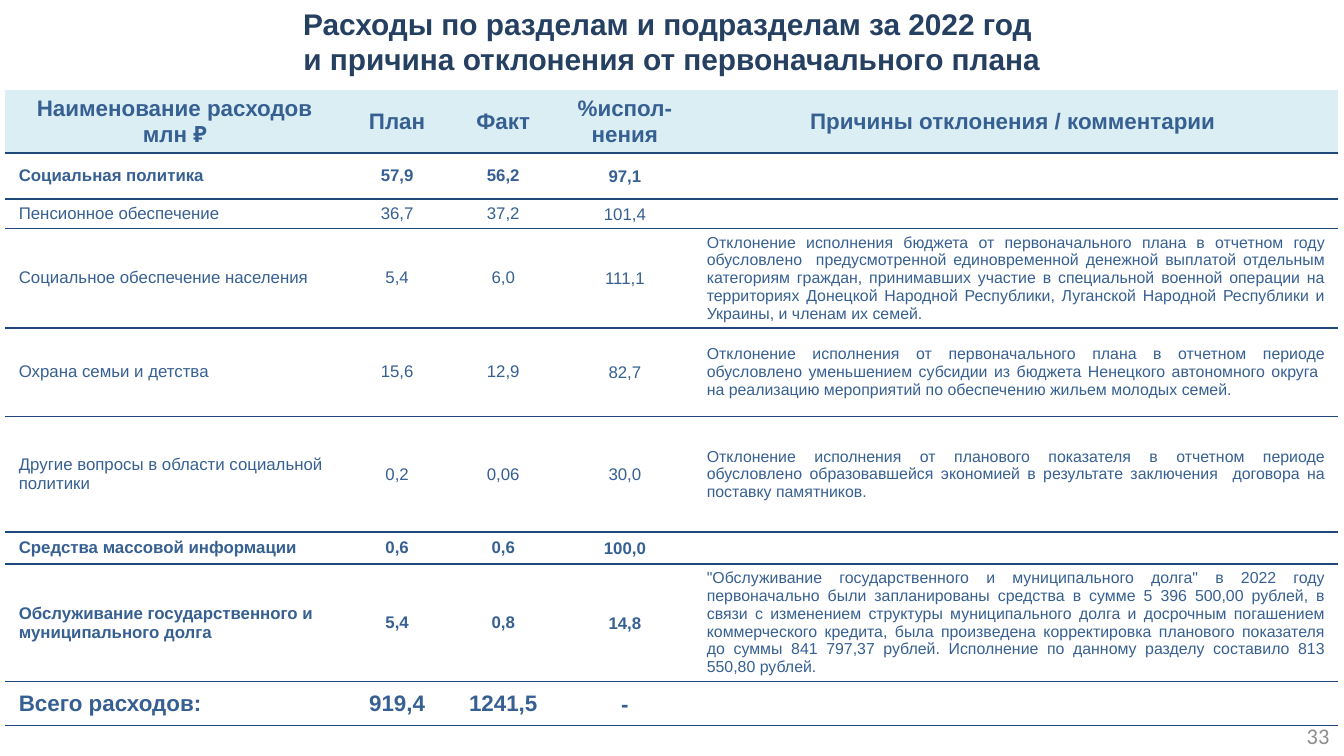
import pptx
import pptx.dml.color
import pptx.enum.text
import pptx.util
from lxml import etree
from pptx.oxml.ns import qn

Inches = pptx.util.Inches
Pt = pptx.util.Pt
ALIGN = pptx.enum.text.PP_ALIGN
MIDDLE = pptx.enum.text.MSO_ANCHOR.MIDDLE

COLORS = {
    "title": "254061",
    "text": "376092",
    "header": "DBEEF4",
    "rule": "1F497D",
    "number": "8C8C8C",
}
COLUMN_WIDTHS = [2.52, 0.79, 0.79, 1.02, 4.8]
HEADER = ["Наименование расходов млн ₽", "План", "Факт", "%испол-нения",
          "Причины отклонения / комментарии "]
HEADER_HEIGHT = 0.47

# Height, size, bold, then the five cell texts
ROWS = [
    (0.34, 9, True, ["Социальная политика", "57,9", "56,2", "97,1", ""]),
    (0.2, 9, False, ["Пенсионное обеспечение", "36,7", "37,2", "101,4", ""]),
    (0.73, 9, False, [
        "Социальное обеспечение населения", "5,4", "6,0", "111,1",
        "Отклонение исполнения бюджета от первоначального плана в отчетном году "
        "обусловлено  предусмотренной единовременной денежной выплатой отдельным "
        "категориям граждан, принимавших участие в специальной военной операции на "
        "территориях Донецкой Народной Республики, Луганской Народной Республики и "
        "Украины, и членам их семей."]),
    (0.66, 9, False, [
        "Охрана семьи и детства", "15,6", "12,9", "82,7",
        "Отклонение исполнения от первоначального плана в отчетном периоде "
        "обусловлено уменьшением субсидии из бюджета Ненецкого автономного округа  "
        "на реализацию мероприятий по обеспечению жильем молодых семей. "]),
    (0.86, 9, False, [
        "Другие вопросы в области социальной политики", "0,2", "0,06", "30,0",
        "Отклонение исполнения от планового показателя в отчетном периоде "
        "обусловлено образовавшейся экономией в результате заключения  договора на "
        "поставку памятников."]),
    (0.24, 9, True, ["Средства массовой информации", "0,6", "0,6", "100,0", ""]),
    (0.86, 9, True, [
        "Обслуживание государственного и муниципального долга", "5,4", "0,8", "14,8",
        "\"Обслуживание государственного и муниципального долга\" в 2022 году "
        "первоначально были запланированы средства в сумме 5 396 500,00 рублей, в "
        "связи с изменением структуры муниципального долга и досрочным погашением "
        "коммерческого кредита, была произведена корректировка планового показателя "
        "до суммы 841 797,37 рублей. Исполнение по данному разделу составило 813 "
        "550,80 рублей."]),
    (0.33, 12, True, ["Всего расходов:", "919,4", "1241,5", "-", ""]),
]


def style_paragraph(paragraph, size, color, bold=False, align=ALIGN.LEFT, name="Arial"):
    paragraph.alignment = align
    font = paragraph.font
    font.name, font.size, font.bold = name, Pt(size), bold
    font.color.rgb = pptx.dml.color.RGBColor.from_string(COLORS[color])


def add_text(slide, left, top, width, height, lines, **style):
    box = slide.shapes.add_textbox(Inches(left), Inches(top), Inches(width), Inches(height))
    frame = box.text_frame
    frame.word_wrap = True
    frame.vertical_anchor = MIDDLE
    frame.text = "\n".join(lines)
    for paragraph in frame.paragraphs:
        style_paragraph(paragraph, **style)


def set_borders(cell, ruled_sides):
    """Rule the given sides and clear the others; borders come before the fill."""
    properties = cell._tc.get_or_add_tcPr()
    for index, side in enumerate("LRTB"):
        line = etree.Element(qn(f"a:ln{side}"), w=str(Pt(1)))
        if side in ruled_sides:
            fill = etree.SubElement(line, qn("a:solidFill"))
            etree.SubElement(fill, qn("a:srgbClr"), val=COLORS["rule"])
        else:
            etree.SubElement(line, qn("a:noFill"))
        properties.insert(index, line)


def fill_cell(cell, text, size, bold, align):
    cell.vertical_anchor = MIDDLE
    cell.margin_left = cell.margin_right = Inches(0.1)
    cell.margin_top = cell.margin_bottom = Inches(0.04)
    cell.text = text
    paragraph = cell.text_frame.paragraphs[0]
    style_paragraph(paragraph, size, "text", bold, align)
    if not text:
        # An empty cell takes its line height from the end mark
        etree.SubElement(paragraph._p, qn("a:endParaRPr"), sz=str(size * 100))


def add_expense_table(slide, left, top):
    heights = [HEADER_HEIGHT] + [row[0] for row in ROWS]
    frame = slide.shapes.add_table(
        len(heights), len(COLUMN_WIDTHS), Inches(left), Inches(top),
        Inches(sum(COLUMN_WIDTHS)), Inches(sum(heights)))
    table = frame.table
    table.first_row = table.horz_banding = False
    for column, width in zip(table.columns, COLUMN_WIDTHS):
        column.width = Inches(width)
    for row, height in zip(table.rows, heights):
        row.height = Inches(height)

    for index, text in enumerate(HEADER):
        cell = table.cell(0, index)
        fill_cell(cell, text, 12, True, ALIGN.CENTER)
        cell.fill.solid()
        cell.fill.fore_color.rgb = pptx.dml.color.RGBColor.from_string(COLORS["header"])
        set_borders(cell, "B")

    alignments = [ALIGN.LEFT] + [ALIGN.CENTER] * 3 + [ALIGN.JUSTIFY]
    comment_column = len(COLUMN_WIDTHS) - 1
    for row_index, (_, size, bold, texts) in enumerate(ROWS, start=1):
        for index, text in enumerate(texts):
            cell = table.cell(row_index, index)
            if index == comment_column:
                fill_cell(cell, text, 8.5 if text else 8, False, alignments[index])
            else:
                fill_cell(cell, text, size, bold, alignments[index])
            if index == 3:
                cell.margin_left = cell.margin_right = cell.margin_top = Inches(0.01)
                cell.margin_bottom = 0
            cell.fill.background()
            set_borders(cell, "TB")


def main():
    presentation = pptx.Presentation()
    presentation.slide_width = Inches(10)
    presentation.slide_height = presentation.slide_width * 9 // 16
    slide = presentation.slides.add_slide(presentation.slide_layouts[6])

    add_expense_table(slide, 0.04, 0.67)
    add_text(slide, 7.66, 5.32, 2.33, 0.3, ["33"],
             size=12, color="number", align=ALIGN.RIGHT, name="Calibri")
    add_text(slide, 0, 0, 10, 0.61,
             ["Расходы по разделам и подразделам за 2022 год ",
              "и причина отклонения от первоначального плана"],
             size=16, color="title", bold=True, align=ALIGN.CENTER)
    presentation.save("out.pptx")


if __name__ == "__main__":
    main()
